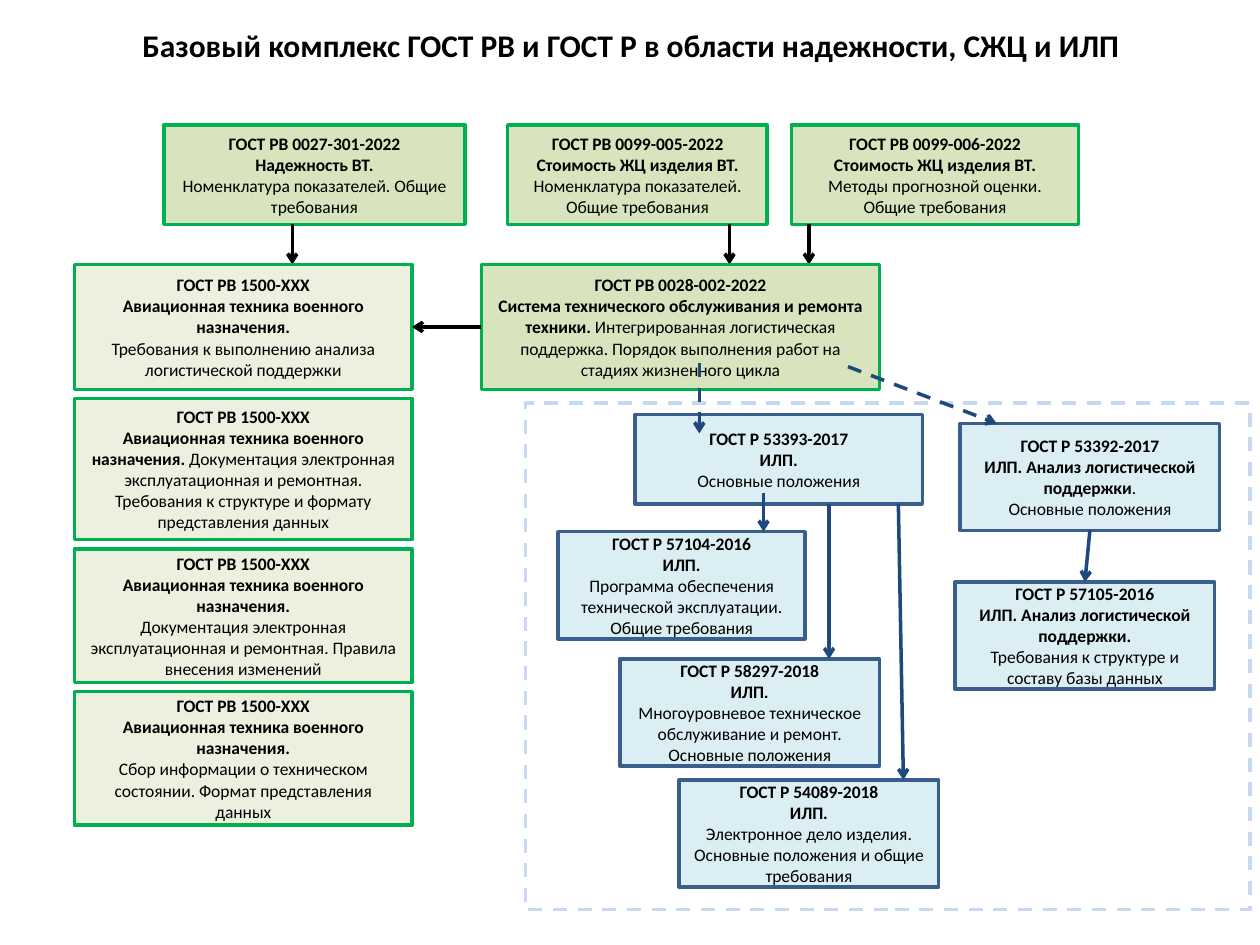
from collections import namedtuple
from lxml.etree import SubElement
from pptx import Presentation
from pptx.dml.color import RGBColor as RGB
from pptx.enum.dml import MSO_LINE as Dash
from pptx.enum.shapes import MSO_CONNECTOR as Connector, MSO_SHAPE as Shape
from pptx.enum.text import MSO_ANCHOR as Anchor, PP_ALIGN as Align
from pptx.oxml.ns import qn
from pptx.util import Inches, Pt

Box = namedtuple("Box", "x y w h")
Style = namedtuple("Style", "fill line")
TOP, LEFT, BOTTOM, RIGHT = range(4)
COLUMNS, ROWS = 100, 75  # slide grid
CELL = Inches(10) / COLUMNS


class Theme:
    font = "Calibri"
    title_size, card_size, stroke = Pt(18), Pt(10), Pt(2)
    text, arrow, ils_arrow = "000000", "000000", "1F497D"
    frame = "C6D9F1"
    current = Style("D7E4BD", "00B050")
    planned = Style("EBF1DE", "00B050")
    ils = Style("DBEEF4", "3A5F8C")


def grid(*cells):
    return [round(cell * CELL) for cell in cells]


def within(region, x, y, w, h):
    return Box(region.x + x, region.y + y, w, h)


def set_stroke(line, color, dash=None):
    line.color.rgb = RGB.from_string(color)
    for name, value in {"width": Theme.stroke, "dash_style": dash}.items():
        setattr(line, name, value)


def write(paragraph, wording, size, bold):
    paragraph.alignment = Align.CENTER
    run = paragraph.add_run()
    run.text = wording
    font_format = {"name": Theme.font, "size": size, "bold": bold}
    for name, value in font_format.items():
        setattr(run.font, name, value)
    run.font.color.rgb = RGB.from_string(Theme.text)


def rectangle(slide, box, style, dash=None):
    rect = slide.shapes.add_shape(Shape.RECTANGLE, *grid(*box))
    rect.shadow.inherit = False
    if style.fill:
        rect.fill.solid()
        rect.fill.fore_color.rgb = RGB.from_string(style.fill)
    else:
        rect.fill.background()
    set_stroke(rect.line, style.line, dash)
    return rect


def card(slide, box, style, code, heading, body="", inline=""):
    """Standard: bold code and heading, plain body; inline text follows the heading."""
    rect = rectangle(slide, box, style)
    frame = rect.text_frame
    for name, value in {"word_wrap": True, "vertical_anchor": Anchor.MIDDLE}.items():
        setattr(frame, name, value)
    write(frame.paragraphs[0], code, Theme.card_size, True)
    heading_line = frame.add_paragraph()
    write(heading_line, heading, Theme.card_size, True)
    if inline:
        write(heading_line, inline, Theme.card_size, False)
    if body:
        write(frame.add_paragraph(), body, Theme.card_size, False)
    return rect


def arrow(slide, start, end, color, dash=None):
    link = slide.shapes.add_connector(Connector.STRAIGHT, *grid(*start, *end))
    set_stroke(link.line, color, dash)
    SubElement(link.line._get_or_add_ln(), qn("a:tailEnd"), type="arrow")
    SubElement(link._element.spPr, qn("a:effectLst"))
    return link


def join(link, source, source_side, target, target_side):
    link.begin_connect(source, source_side)
    link.end_connect(target, target_side)


def title(slide, box):
    frame = slide.shapes.add_textbox(*grid(*box)).text_frame
    for name, value in {"word_wrap": True, "vertical_anchor": Anchor.MIDDLE}.items():
        setattr(frame, name, value)
    write(frame.paragraphs[0],
          "Базовый комплекс ГОСТ РВ и ГОСТ Р в области надежности, СЖЦ и ИЛП",
          Theme.title_size, True)


def base_standards(slide, region):
    """Top row; arrows run down to the next row."""
    cost = "Стоимость ЖЦ изделия ВТ."
    standards = [
        (0, 23.9, "ГОСТ РВ 0027-301-2022", "Надежность ВТ.",
         "Номенклатура показателей. Общие требования"),
        (27.3, 20.6, "ГОСТ РВ 0099-005-2022", cost,
         "Номенклатура показателей. Общие требования"),
        (49.8, 22.8, "ГОСТ РВ 0099-006-2022", cost,
         "Методы прогнозной оценки. Общие требования"),
    ]
    for x, width, *wording in standards:
        card(slide, within(region, x, 0, width, region.h), Theme.current, *wording)
    bottom = region.y + region.h
    for x in (10.2, 44.9, 51.2):
        arrow(slide, (region.x + x, bottom), (region.x + x, bottom + 3.2), Theme.arrow)


def support_standard(slide, region):
    return card(slide, region, Theme.current, "ГОСТ РВ 0028-002-2022",
                "Система технического обслуживания и ремонта техники. ",
                inline="Интегрированная логистическая поддержка. "
                       "Порядок выполнения работ на стадиях жизненного цикла")


def aviation_standards(slide, region):
    """Left column, stacked with equal gaps; returns its first card."""
    standards = [
        (9.9, "Требования к выполнению анализа логистической поддержки", ""),
        (11.2, "", " Документация электронная эксплуатационная и ремонтная. "
                   "Требования к структуре и формату представления данных"),
        (10.6, "Документация электронная эксплуатационная и ремонтная. "
               "Правила внесения изменений", ""),
        (10.6, "Сбор информации о техническом состоянии. "
               "Формат представления данных", ""),
    ]
    gap = (region.h - sum(row[0] for row in standards)) / (len(standards) - 1)
    cards, y = [], 0
    for height, body, inline in standards:
        cards.append(card(slide, within(region, 0, y, region.w, height),
                          Theme.planned, "ГОСТ РВ 1500-ХХХ",
                          "Авиационная техника военного назначения.", body, inline))
        y += height + gap
    return cards[0]


def ils_standards(slide, region):
    """Dashed frame with the logistic support standards and their arrows."""
    rectangle(slide, region, Style(None, Theme.frame), Dash.DASH)
    height, width = 8.5, 20.6
    analysis = "ИЛП. Анализ логистической поддержки"

    # Main provisions and the standards below them
    family = [
        (8.7, 0.9, 22.8, 7.1, "ГОСТ Р 53393-2017", "Основные положения"),
        (12.2, 29.9, width, height, "ГОСТ Р 54089-2018",
         "Электронное дело изделия. Основные положения и общие требования"),
        (7.5, 20.3, width, height, "ГОСТ Р 58297-2018",
         "Многоуровневое техническое обслуживание и ремонт. Основные положения"),
        (2.6, 10.2, 19.6, height, "ГОСТ Р 57104-2016",
         "Программа обеспечения технической эксплуатации. Общие требования"),
    ]
    for x, y, w, h, code, body in family:
        card(slide, within(region, x, y, w, h), Theme.ils, code, "ИЛП.", body)
    for x1, y1, x2, y2 in [(18.9, 7.1, 18.9, 10.2), (24.1, 8, 24.1, 20.3),
                           (29.6, 8, 30, 29.9)]:
        arrow(slide, (region.x + x1, region.y + y1),
              (region.x + x2, region.y + y2), Theme.ils_arrow)

    # Logistic support analysis
    basics = card(slide, within(region, 34.5, 1.6, width, height), Theme.ils,
                  "ГОСТ Р 53392-2017", analysis, "Основные положения", inline=".")
    database = card(slide, within(region, 34.1, 14.2, width, height), Theme.ils,
                    "ГОСТ Р 57105-2016", analysis + ".",
                    "Требования к структуре и составу базы данных")
    link = arrow(slide, (86.5, 42.1), (86.1, 46.2), Theme.ils_arrow)
    join(link, basics, BOTTOM, database, TOP)


def cross_links(slide, support, aviation):
    """Arrows between regions."""
    link = arrow(slide, (38.2, 25.95), (32.7, 25.95), Theme.arrow)
    join(link, support, LEFT, aviation, RIGHT)
    for start, end in [((67.3, 29.1), (79.1, 33.6)), ((55.5, 28.8), (55.5, 34.4))]:
        arrow(slide, start, end, Theme.ils_arrow, Dash.DASH)


def main():
    deck = Presentation()
    deck.slide_width, deck.slide_height = grid(COLUMNS, ROWS)
    slide = deck.slides.add_slide(deck.slide_layouts[6])
    title(slide, Box(5.1, 1.3, 90, 4.6))
    base_standards(slide, Box(13, 9.9, 72.6, 7.9))
    support = support_standard(slide, Box(38.2, 21, 31.6, 9.9))
    aviation = aviation_standards(slide, Box(5.9, 21, 26.8, 44.5))
    ils_standards(slide, Box(41.7, 32, 57.5, 40.2))
    cross_links(slide, support, aviation)
    deck.save("out.pptx")


if __name__ == "__main__":
    main()
